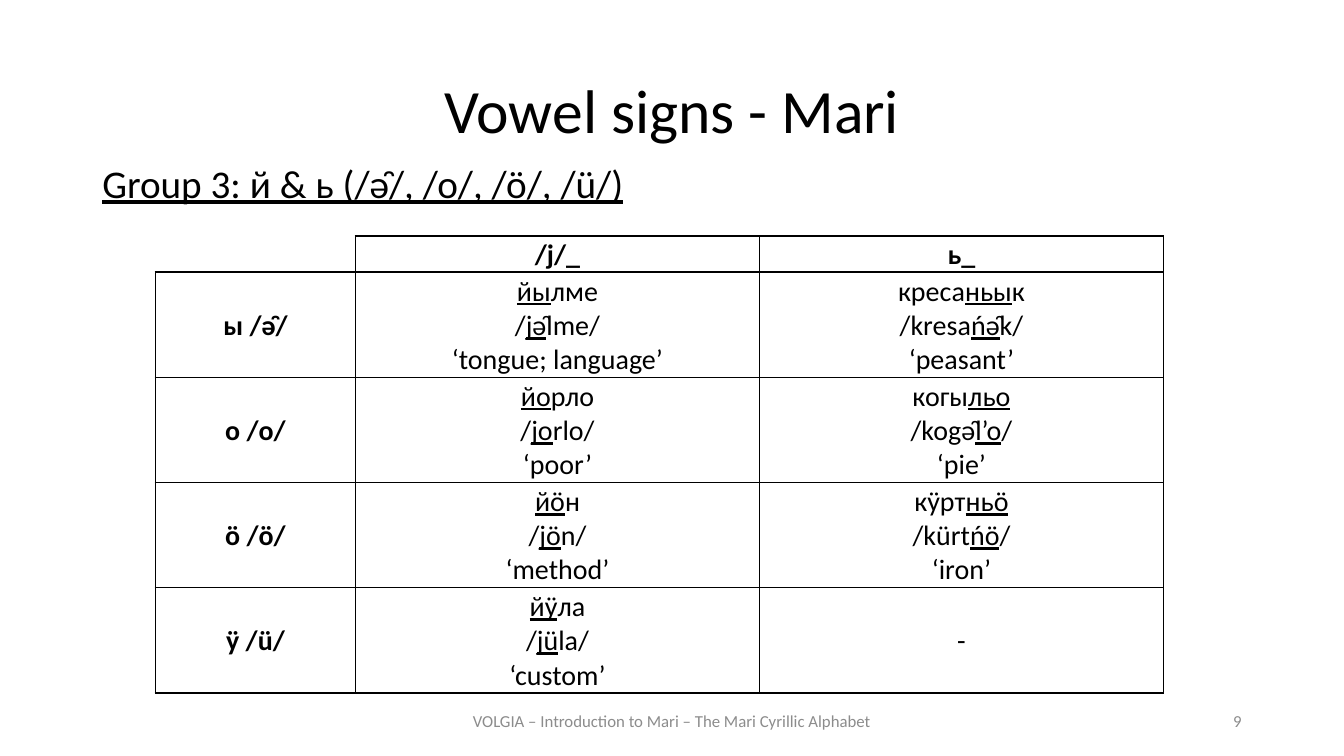
from lxml.etree import SubElement
from pptx import Presentation
from pptx.dml.color import RGBColor
from pptx.enum.text import MSO_ANCHOR, PP_ALIGN
from pptx.oxml.ns import qn
from pptx.util import Cm, Pt

COLORS = {"text": "000000", "footer": "8C8C8C", "background": "FFFFFF"}
THICK, THIN = 1.5, 1

# Each line of a cell is one paragraph; letters between asterisks are underlined.
VOWEL_ROWS = [
    ["", "/j/_", "ь_"],
    ["ы /ə̑/", "*йы*лме\n/*jə̑*lme/\n‘tongue; language’",
     "креса*ньы*к\n/kresa*ńə̑*k/\n‘peasant’"],
    ["о /o/", "*йо*рло\n/*jo*rlo/\n‘poor’", "когы*льо*\n/kogə̑*l’o*/\n‘pie’"],
    ["ӧ /ö/", "*йӧ*н\n/*jö*n/\n‘method’", "кӱрт*ньӧ*\n/kürt*ńö*/\n‘iron’"],
    ["ӱ /ü/", "*йӱ*ла\n/*jü*la/\n‘custom’", "-"],
]
COLUMN_WIDTHS = [5.04, 10.18, 10.18]
HEADER_HEIGHT, ROW_HEIGHT = 0.91, 2.65


def write_text(frame, text, size=20, color="text", bold=False, font="Calibri",
               align=PP_ALIGN.CENTER, line_spacing=None, space_before=None):
    """Write one paragraph per line, underlining what stands between asterisks."""
    for number, line in enumerate(text.split("\n")):
        paragraph = frame.add_paragraph() if number else frame.paragraphs[0]
        paragraph.alignment = align
        paragraph.line_spacing = line_spacing
        paragraph.space_before = space_before
        for part, letters in enumerate(line.split("*")):
            if letters:
                run = paragraph.add_run()
                run.text = letters
                run.font.name = font
                run.font.size = Pt(size)
                run.font.bold = bold
                run.font.underline = part % 2 == 1
                run.font.color.rgb = RGBColor.from_string(COLORS[color])


def set_border(cell, side, width):
    """Draw one cell edge; a width of 0 hides it."""
    line = SubElement(cell._tc.get_or_add_tcPr(), qn(f"a:ln{side}"),
                      w=str(Pt(width)))
    if width:
        fill = SubElement(line, qn("a:solidFill"))
        SubElement(fill, qn("a:srgbClr"), val=COLORS["text"])
    else:
        SubElement(line, qn("a:noFill"))


class VowelSlide:
    def __init__(self, presentation):
        self.slide = presentation.slides.add_slide(presentation.slide_layouts[6])
        fill = self.slide.background.fill
        fill.solid()
        fill.fore_color.rgb = RGBColor.from_string(COLORS["background"])

    def text(self, text, left, top, width, height, anchor=MSO_ANCHOR.MIDDLE,
             **style):
        box = self.slide.shapes.add_textbox(Cm(left), Cm(top), Cm(width),
                                            Cm(height))
        frame = box.text_frame
        frame.word_wrap = True
        frame.vertical_anchor = anchor
        write_text(frame, text, **style)

    def table(self, rows, left, top, widths, heights):
        table = self.slide.shapes.add_table(
            len(rows), len(widths), Cm(left), Cm(top),
            Cm(sum(widths)), Cm(sum(heights))).table
        table.first_row = table.horz_banding = False
        for column, width in zip(table.columns, widths):
            column.width = Cm(width)
        for row, height in zip(table.rows, heights):
            row.height = Cm(height)

        # The frame and the edges of the headings are thick.
        column_lines = [THICK, THICK] + [THIN] * (len(widths) - 2) + [THICK]
        row_lines = [THICK, THICK] + [THIN] * (len(rows) - 2) + [THICK]
        for r, row in enumerate(rows):
            for c, text in enumerate(row):
                cell = table.cell(r, c)
                corner = r == c == 0
                set_border(cell, "L", 0 if corner else column_lines[c])
                set_border(cell, "R", column_lines[c + 1])
                set_border(cell, "T", 0 if corner else row_lines[r])
                set_border(cell, "B", row_lines[r + 1])
                cell.fill.background()
                cell.margin_left = cell.margin_right = Cm(0.4)
                cell.margin_top, cell.margin_bottom = Cm(0.05), 0
                cell.vertical_anchor = MSO_ANCHOR.MIDDLE
                write_text(cell.text_frame, text, bold=r == 0 or c == 0)


def main():
    presentation = Presentation()
    presentation.slide_width, presentation.slide_height = Cm(33.87), Cm(19.05)
    slide = VowelSlide(presentation)
    slide.text("Vowel signs - Mari", 2.33, 1.01, 29.21, 3.68, size=44,
               line_spacing=0.9)
    slide.text("*Group 3: й & ь (/ə̑/, /o/, /ö/, /ü/)*", 2.33, 4.02, 29.21, 1.35,
               anchor=MSO_ANCHOR.TOP, size=28, align=PP_ALIGN.LEFT,
               line_spacing=0.9, space_before=Pt(10))
    slide.table(VOWEL_ROWS, 3.92, 5.95, COLUMN_WIDTHS,
                [HEADER_HEIGHT] + [ROW_HEIGHT] * (len(VOWEL_ROWS) - 1))
    slide.text("VOLGIA – Introduction to Mari – The Mari Cyrillic Alphabet",
               11.22, 17.66, 11.43, 1.01, size=12, color="footer")
    slide.text("9", 23.92, 17.66, 7.62, 1.01, size=12, color="footer",
               align=PP_ALIGN.RIGHT)
    presentation.save("out.pptx")


if __name__ == "__main__":
    main()
